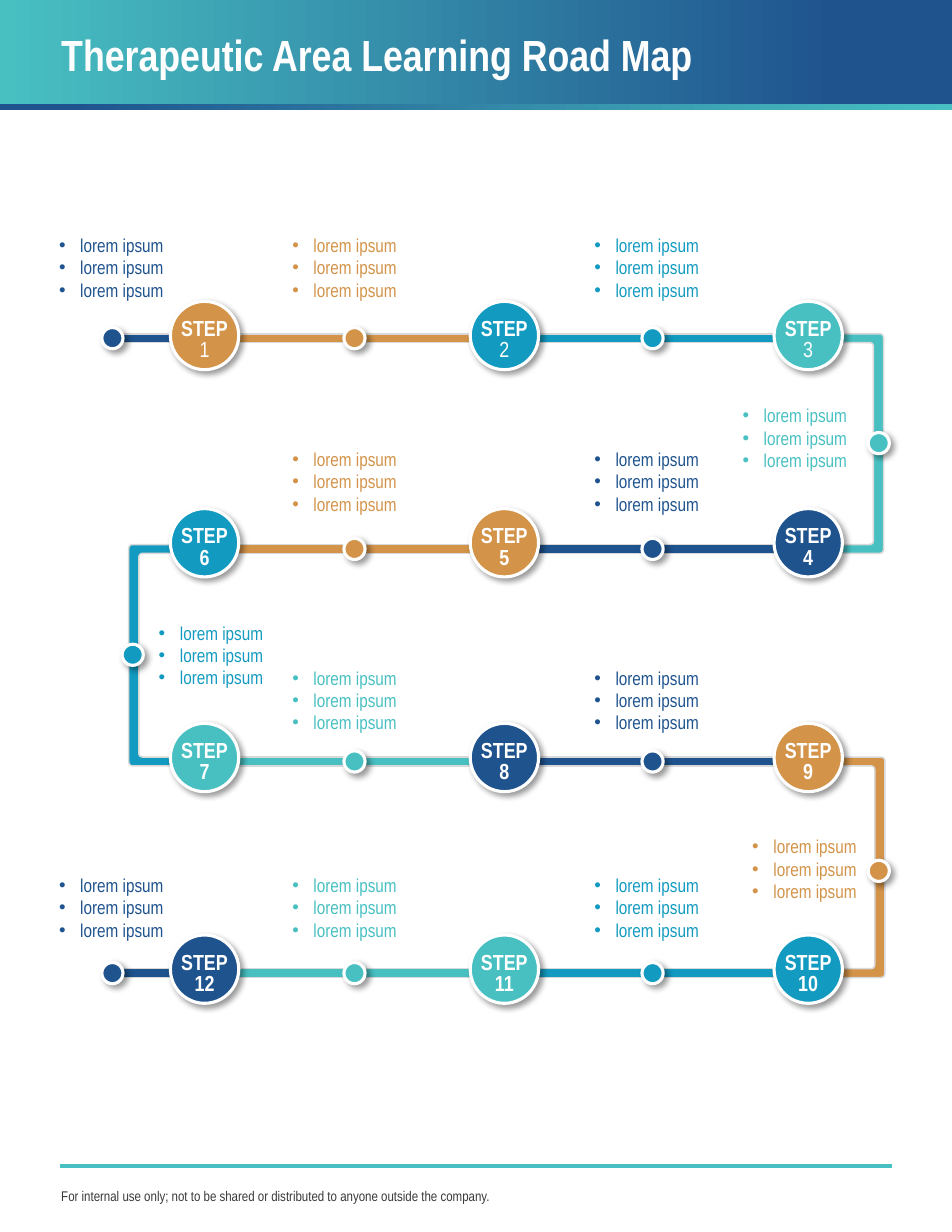
"""Build the therapeutic area learning road map slide."""
from dataclasses import dataclass
from typing import Optional

from lxml import etree
from pptx import Presentation
from pptx.dml.color import RGBColor
from pptx.enum.shapes import MSO_CONNECTOR, MSO_SHAPE
from pptx.enum.text import MSO_ANCHOR, PP_ALIGN
from pptx.oxml.ns import qn
from pptx.util import Cm, Pt

RECTANGLE, OVAL = MSO_SHAPE.RECTANGLE, MSO_SHAPE.OVAL
STRAIGHT = MSO_CONNECTOR.STRAIGHT
MIDDLE, TOP = MSO_ANCHOR.MIDDLE, MSO_ANCHOR.TOP
CENTER = PP_ALIGN.CENTER

NAVY, ORANGE, BLUE, TEAL = "1F538E", "D39349", "129AC1", "48C0C2"
WHITE, EDGE, INK = "FFFFFF", "D9D9D9", "3B3838"
FONT = "Arial Narrow"
BAR, DOT, STEP = 0.2, 0.48, 1.55
BEND_WIDTH, BEND_SIDE, BEND_RADIUS = 2.21, 0.23, 0.1
STEP_CENTERS = (4.64, 11.44, 18.33)


@dataclass(frozen=True)
class Leg:
    """Horizontal stretch of road with the places of its dot and note."""
    left: float
    width: float
    dot_x: float
    note_x: float


@dataclass(frozen=True)
class Row:
    """One line of the road: heights, leg colours, step numbers and colours."""
    road_y: float
    step_y: float
    note_y: float
    leg_colors: tuple[Optional[str], ...]
    numbers: tuple[int, ...]
    step_colors: tuple[str, ...]


@dataclass(frozen=True)
class Bend:
    """Turn between two rows; direction is 1 to the right and -1 to the left."""
    start_x: float
    direction: int
    color: str
    dot: tuple[float, float]
    note: tuple[float, float]
    note_width: float = 3.23


LEGS = (
    Leg(2.57, 1.93, 2.55, 1.09),
    Leg(5.36, 5.31, 8.04, 6.38),
    Leg(12.14, 5.56, 14.8, 13.23),
)
ROWS = (
    Row(7.67, 7.61, 5.18, (NAVY, ORANGE, BLUE), (1, 2, 3), (ORANGE, BLUE, TEAL)),
    Row(12.45, 12.31, 10.03, (None, ORANGE, NAVY), (6, 5, 4), (BLUE, ORANGE, NAVY)),
    Row(17.27, 17.18, 14.99, (None, TEAL, NAVY), (7, 8, 9), (TEAL, NAVY, ORANGE)),
    Row(22.07, 21.98, 19.69, (NAVY, TEAL, BLUE), (12, 11, 10), (NAVY, TEAL, BLUE)),
)
BENDS = (
    Bend(17.83, 1, TEAL, (19.93, 10.05), (16.59, 9.04)),
    Bend(5.13, -1, BLUE, (3.01, 14.85), (3.35, 13.97)),
    Bend(17.86, 1, ORANGE, (19.93, 19.75), (16.81, 18.82), 2.9),
)


def rgb(color: str) -> RGBColor:
    """Turn a hex string into a colour."""
    return RGBColor.from_string(color)


def paint(shape, fill: str, line: str, weight: float) -> None:
    """Give a shape a plain fill and outline without a shadow."""
    shape.shadow.inherit = False
    shape.fill.solid()
    shape.fill.fore_color.rgb = rgb(fill)
    shape.line.color.rgb = rgb(line)
    shape.line.width = Pt(weight)


def style(font, size: float, color: str, bold: bool = False) -> None:
    """Set the face, size, colour and weight of a font."""
    font.name, font.size, font.bold = FONT, Pt(size), bold
    font.color.rgb = rgb(color)


def add_gradient(page, top: float, height: float, stops: tuple) -> None:
    """Draw a full-width band running from left to right through two stops."""
    band = page.shapes.add_shape(RECTANGLE, 0, Cm(top), Cm(21.59), Cm(height))
    band.shadow.inherit = False
    band.line.fill.background()
    band.fill.gradient()
    band.fill.gradient_angle = 0
    for stop, (position, color) in zip(band.fill.gradient_stops, stops):
        stop.position, stop.color.rgb = position, rgb(color)


def add_text(page, left: float, top: float, width: float, height: float,
             text: str, anchor=MIDDLE):
    """Add a wrapping text box and return its text frame."""
    box = page.shapes.add_textbox(Cm(left), Cm(top), Cm(width), Cm(height))
    frame = box.text_frame
    frame.word_wrap, frame.vertical_anchor, frame.text = True, anchor, text
    return frame


def add_note(page, left: float, top: float, width: float, color: str) -> None:
    """Add a three-item bulleted list."""
    frame = add_text(page, left, top, width, 1.8, "\n".join(["lorem ipsum"] * 3), TOP)
    for para in frame.paragraphs:
        properties = para._p.get_or_add_pPr()
        properties.set("marL", str(Cm(0.48)))
        properties.set("indent", str(-Cm(0.48)))
        etree.SubElement(properties, qn("a:buFont")).set("typeface", "Arial")
        etree.SubElement(properties, qn("a:buChar")).set("char", "•")
        for span in para.runs:
            style(span.font, 12, color)


def add_disc(page, x: float, y: float, size: float, color: str):
    """Draw a white-ringed disc with a soft shadow, centred on a point."""
    disc = page.shapes.add_shape(
        OVAL, Cm(x - size / 2), Cm(y - size / 2), Cm(size), Cm(size))
    paint(disc, color, WHITE, 2)
    effects = disc._element.spPr.find(qn("a:effectLst"))
    shadow = etree.SubElement(
        effects, qn("a:outerShdw"), blurRad=str(Pt(4)), dist=str(Pt(3)),
        dir="2700000", algn="tl", rotWithShape="0")
    tint = etree.SubElement(shadow, qn("a:srgbClr"), val="000000")
    etree.SubElement(tint, qn("a:alpha"), val="40000")
    return disc


def add_step(page, x: float, y: float, number: int, color: str) -> None:
    """Draw a numbered step disc."""
    frame = add_disc(page, x, y, STEP, color).text_frame
    frame.margin_left = frame.margin_right = frame.margin_bottom = 0
    frame.margin_top = Cm(0.25)
    frame.vertical_anchor = MIDDLE
    para = frame.paragraphs[0]
    para.text = f"STEP\v{number}"
    para.alignment, para.line_spacing = CENTER, Pt(13.6)
    label, digits = para.runs
    style(label.font, 14, WHITE, True)
    style(digits.font, 14, WHITE, number > 3)


def add_bar(page, left: float, y: float, width: float, color: str) -> None:
    """Draw a straight stretch of road centred on a height."""
    bar = page.shapes.add_shape(
        RECTANGLE, Cm(left), Cm(y - BAR / 2), Cm(width), Cm(BAR))
    paint(bar, color, EDGE, 1)


def round_corner(x: float, y: float, side_x: int, side_y: int) -> list:
    """Return points that curve from (x + side_x r, y) to (x, y + side_y r)."""
    shares = [step / 6 for step in range(7)]
    return [(x + side_x * BEND_RADIUS * (1 - t) ** 2, y + side_y * BEND_RADIUS * t ** 2)
            for t in shares]


def add_bend(page, bend: Bend, upper_y: float, lower_y: float) -> None:
    """Draw the bracket-shaped road that joins two rows."""
    height, inner = lower_y - upper_y + BAR, BEND_WIDTH - BEND_SIDE
    outline = [(0, 0), *round_corner(BEND_WIDTH, 0, -1, 1),
               *reversed(round_corner(BEND_WIDTH, height, -1, -1)),
               (0, height), (0, height - BAR),
               *round_corner(inner, height - BAR, -1, -1),
               *reversed(round_corner(inner, BAR, -1, 1)), (0, BAR)]
    points = [(Cm(bend.start_x + bend.direction * x), Cm(upper_y - BAR / 2 + y))
              for x, y in outline]
    builder = page.shapes.build_freeform(*points[0])
    builder.add_line_segments(points[1:], close=True)
    paint(builder.convert_to_shape(), bend.color, EDGE, 1)


def add_frame(page) -> None:
    """Draw the heading band, title, footer rule and footer text."""
    add_gradient(page, 2.03, 0.46, ((0.07, NAVY), (1, TEAL)))
    add_gradient(page, 0, 2.36, ((0, TEAL), (0.88, NAVY)))
    title = add_text(page, 1.14, 0.43, 18.72, 1.75, "Therapeutic Area Learning Road Map")
    title.paragraphs[0].line_spacing = 0.9
    style(title.paragraphs[0].runs[0].font, 28, WHITE, True)
    rule = page.shapes.add_connector(STRAIGHT, Cm(1.35), Cm(26.44), Cm(20.24), Cm(26.44))
    rule.line.color.rgb, rule.line.width = rgb(TEAL), Pt(2.25)
    etree.SubElement(rule._element.spPr, qn("a:effectLst"))
    footer = add_text(page, 1.14, 26.85, 11.13, 0.53, "For internal use only; not to be "
                      "shared or distributed to anyone outside the company.")
    style(footer.paragraphs[0].runs[0].font, 9, INK)


def main() -> None:
    """Assemble and save the deck."""
    deck = Presentation()
    deck.slide_width, deck.slide_height = Cm(21.59), Cm(27.94)
    page = deck.slides.add_slide(deck.slide_layouts[6])
    add_frame(page)
    for bend, upper, lower in zip(BENDS, ROWS, ROWS[1:]):
        add_bend(page, bend, upper.road_y, lower.road_y)
        add_disc(page, *bend.dot, DOT, bend.color)
        add_note(page, *bend.note, bend.note_width, bend.color)
    for row in ROWS:
        for leg, color in zip(LEGS, row.leg_colors):
            if color:
                add_bar(page, leg.left, row.road_y, leg.width, color)
                add_disc(page, leg.dot_x, row.road_y, DOT, color)
                add_note(page, leg.note_x, row.note_y, 3.23, color)
        for x, number, color in zip(STEP_CENTERS, row.numbers, row.step_colors):
            add_step(page, x, row.step_y, number, color)
    deck.save("out.pptx")


if __name__ == "__main__":
    main()
